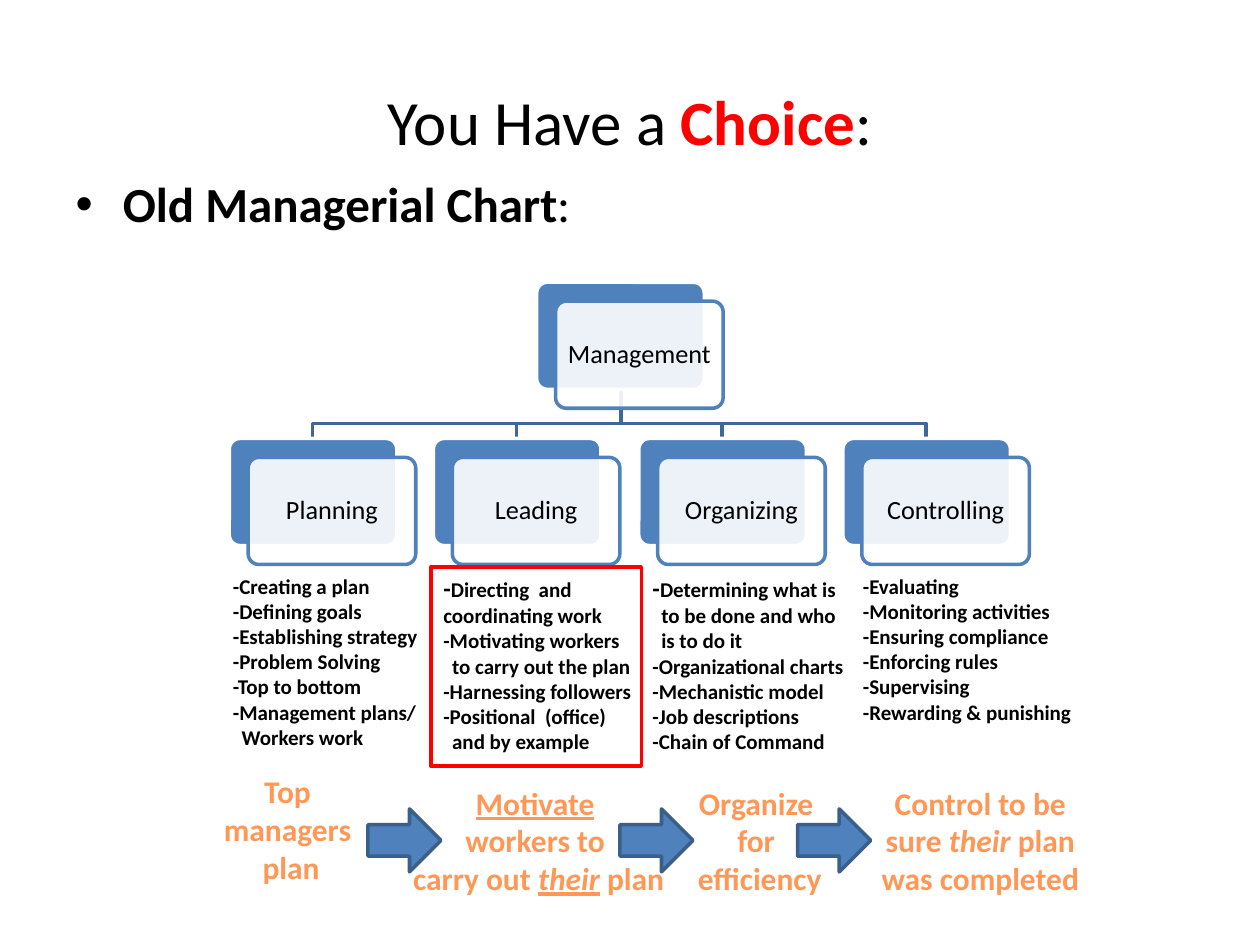
from lxml.etree import SubElement
from pptx import Presentation
from pptx.dml.color import RGBColor as RGB
from pptx.enum.shapes import MSO_SHAPE as SHAPE
from pptx.enum.text import MSO_ANCHOR as ANCHOR, MSO_AUTO_SIZE as AUTO, PP_ALIGN as ALIGN
from pptx.oxml.ns import qn
from pptx.util import Pt


class Theme:
    font = "Calibri"
    black = RGB.from_string("000000")
    white = RGB.from_string("FFFFFF")
    red = RGB.from_string("FF0000")
    blue = RGB.from_string("4F81BD")
    link = RGB.from_string("3F6797")
    edge = RGB.from_string("3A5F8C")
    orange = RGB.from_string("FF9856")
    title, heading, step, node, dash, detail = 36, 28, 18, 15, 14, 12
    line = Pt(2)


PX = 9144


def add_run(p, text, size, color=Theme.black, style=""):
    r = p.add_run()
    r.text = text
    r.font.name = Theme.font
    r.font.size = Pt(size)
    r.font.color.rgb = color
    r.font.bold = "b" in style
    r.font.italic = "i" in style
    r.font.underline = "u" in style


def add_box(kind, x, y, w, h, fill, line):
    s = shapes.add_shape(kind, x * PX, y * PX, w * PX, h * PX)
    s.shadow.inherit = False
    if fill is None:
        s.fill.background()
    else:
        s.fill.solid()
        s.fill.fore_color.rgb = fill
    s.line.color.rgb = line
    s.line.width = Theme.line
    return s


prs = Presentation()
prs.slide_width, prs.slide_height = 1000 * PX, 750 * PX
slide = prs.slides.add_slide(prs.slide_layouts[1])
shapes = slide.shapes

title, body = slide.placeholders
for s, y, h in ((title, 33, 125), (body, 133, 537)):
    s.left, s.top, s.width, s.height = 50 * PX, y * PX, 900 * PX, h * PX

p = title.text_frame.paragraphs[0]
add_run(p, "You Have a ", Theme.title)
add_run(p, "Choice", Theme.title, Theme.red, "b")
add_run(p, ":", Theme.title)
p = body.text_frame.paragraphs[0]
add_run(p, "Old Managerial Chart", Theme.heading, style="b")
add_run(p, ":", Theme.heading)

root = ("Management", 426, 224)
children = [
    ("Planning", 182, 348),
    ("Leading", 344, 348),
    ("Organizing", 507, 348),
    ("Controlling", 669, 348),
]
node_w, node_h, offset = 133, 85, 15
root_x = root[1] + node_w // 2 + 1

for name, x, y in reversed(children):
    child_x = x + node_w // 2
    fb = shapes.build_freeform(root_x, 308, scale=PX)
    fb.add_line_segments([(root_x, 336), (child_x, 336), (child_x, y)], close=False)
    s = fb.convert_to_shape()
    s.shadow.inherit = False
    s.fill.background()
    s.line.color.rgb = Theme.link
    s.line.width = Theme.line

for name, x, y in [root] + children:
    back = add_box(SHAPE.ROUNDED_RECTANGLE, x, y, node_w, node_h, Theme.blue, Theme.white)
    front = add_box(SHAPE.ROUNDED_RECTANGLE, x + offset, y + offset, node_w, node_h,
                    Theme.white, Theme.blue)
    back.adjustments[0] = front.adjustments[0] = 0.1
    rgb = front.fill._xPr.find(qn("a:solidFill"))[0]
    SubElement(rgb, qn("a:alpha"), val="90000")
    tf = front.text_frame
    tf.word_wrap = True
    tf.vertical_anchor = ANCHOR.MIDDLE
    tf.margin_left = tf.margin_right = tf.margin_top = tf.margin_bottom = 6 * PX
    p = tf.paragraphs[0]
    p.alignment = ALIGN.CENTER
    p.line_spacing = 0.9
    add_run(p, name, Theme.node)

details = [
    (175, 200, 151, Theme.detail, [
        "-Creating a plan", "-Defining goals", "-Establishing strategy",
        "-Problem Solving", "-Top to bottom", "-Management plans/", "Workers work"]),
    (342, 175, 175, Theme.dash, [
        "-Directing  and coordinating work", "-Motivating workers",
        "to carry out the plan", "-Harnessing followers",
        "-Positional  (office)", "and by example"]),
    (508, 175, 178, Theme.dash, [
        "-Determining what is", "to be done and who", "is to do it",
        "-Organizational charts", "-Mechanistic model", "-Job descriptions",
        "-Chain of Command"]),
    (675, 200, 151, Theme.detail, [
        "-Evaluating", "-Monitoring activities", "-Ensuring compliance",
        "-Enforcing rules", "-Supervising", "-Rewarding & punishing"]),
]
for x, w, h, dash_size, lines in details:
    tf = shapes.add_textbox(x * PX, 450 * PX, w * PX, h * PX).text_frame
    tf.word_wrap = True
    tf.auto_size = AUTO.SHAPE_TO_FIT_TEXT
    for i, line in enumerate(lines):
        p = tf.add_paragraph() if i else tf.paragraphs[0]
        if line.startswith("-"):
            add_run(p, "-", Theme.detail if i else dash_size, style="b")
            add_run(p, line[1:], Theme.detail, style="b")
        else:
            p._p.get_or_add_pPr().set("marL", str(7 * PX))
            add_run(p, line, Theme.detail, style="b")

add_box(SHAPE.RECTANGLE, 342, 450, 167, 158, None, Theme.red)

steps = [
    (167, 608, 128, [[("Top ", "b")], [("managers ", "b")], [("plan", "b")]]),
    (315, 617, 225, [[("Motivate", "bu"), (" ", "b")], [("workers to ", "b")],
                     [("carry out ", "b"), ("their", "biu"), (" ", "bi"), ("plan", "b")]]),
    (543, 617, 120, [[("Organize ", "b")], [("for ", "b")], [("efficiency", "b")]]),
    (689, 617, 178, [[("Control to be", "b")],
                     [("sure ", "b"), ("their", "bi"), (" plan", "b")],
                     [("was completed", "b")]]),
]
for x, y, w, lines in steps:
    tf = shapes.add_textbox(x * PX, y * PX, w * PX, 101 * PX).text_frame
    tf.word_wrap = False
    tf.auto_size = AUTO.SHAPE_TO_FIT_TEXT
    for i, runs in enumerate(lines):
        p = tf.add_paragraph() if i else tf.paragraphs[0]
        p.alignment = ALIGN.CENTER
        for text, style in runs:
            add_run(p, text, Theme.step, Theme.orange, style)

for x in (292, 492, 633):
    add_box(SHAPE.RIGHT_ARROW, x, 642, 58, 50, Theme.blue, Theme.edge)

prs.save("out.pptx")
